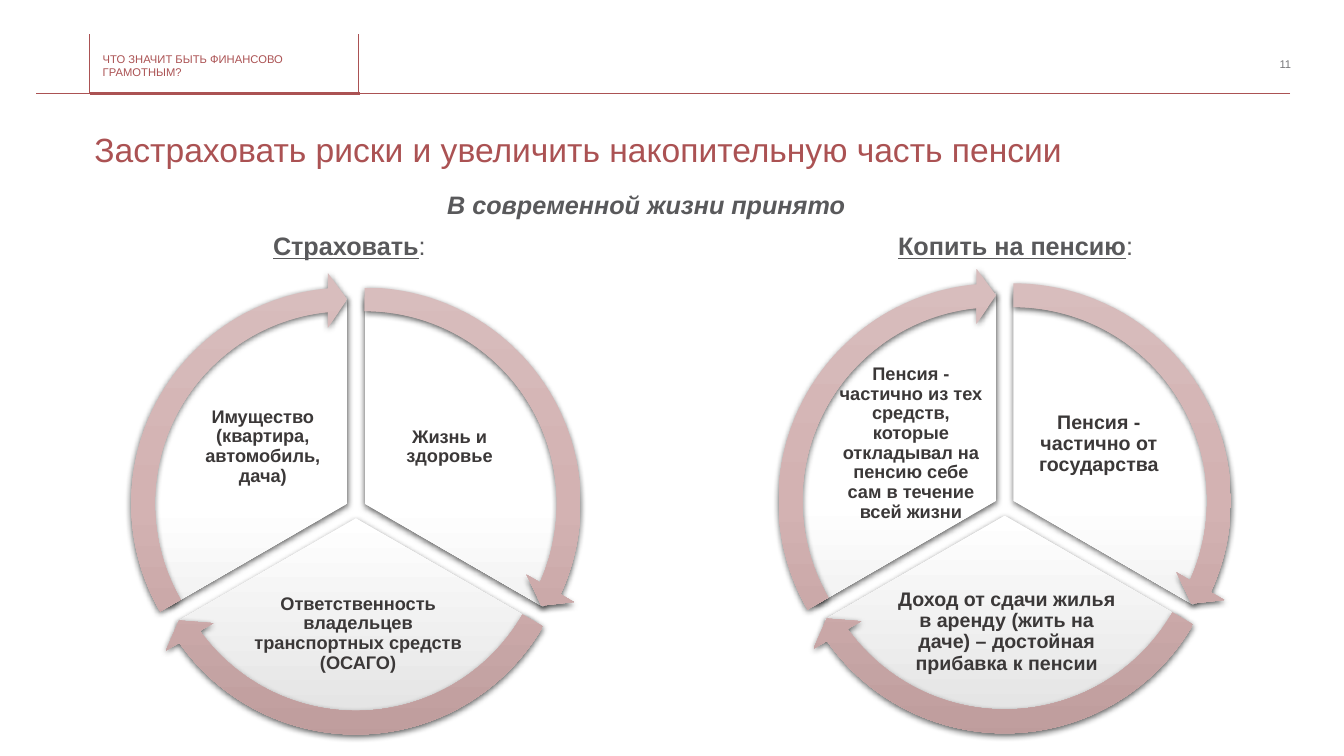
import pptx
import pptx.dml.color
import pptx.enum.shapes
import pptx.enum.text
import pptx.oxml
import pptx.oxml.ns
import pptx.util
from pptx.util import Cm

SHAPE = pptx.enum.shapes.MSO_SHAPE
ALIGN = pptx.enum.text.PP_ALIGN
ANCHOR = pptx.enum.text.MSO_ANCHOR

RED, GREY, DARK = "AB5253", "59595B", "3B3838"
WHITE_FILL = ("FFFFFF", "FFFFFF", "E3E3E3")
PINK_FILL = ("D8BDBD", "D3B2B2", "BE9C9C")

HEADER_LINES = [
    (2.26, 2.34, 0.91, 2.34, 0.25),
    (9.07, 2.36, 2.26, 2.36, 2.25),
    (32.51, 2.34, 9.02, 2.34, 0.25),
    (2.26, 2.36, 2.26, 0.86, 0.25),
    (9.04, 2.36, 9.04, 0.86, 0.25),
]

# Shares of the dial diameter: segment offset, text centre, text size
SEGMENTS = [
    {"shift": (0.021, 0), "pie": (162, 18), "arrow": (14.725, 161.994),
     "centre": (0.227, -0.137), "size": (0.357, 0.298)},
    {"shift": (0, 0.036), "pie": (18, 90), "arrow": (86.72, 18.005),
     "centre": (0.005, 0.316), "size": (0.535, 0.262)},
    {"shift": (-0.021, 0), "pie": (90, 162), "arrow": (158.73, 90),
     "centre": (-0.226, -0.138), "size": (0.357, 0.298)},
]
ARROW_SCALE = 1.123

INSURANCE = [
    ("Жизнь и здоровье", 13),
    ("Ответственность владельцев транспортных средств (ОСАГО)", 13),
    ("Имущество (квартира, автомобиль, дача)", 13),
]
PENSION = [
    ("Пенсия - частично от государства", 14),
    ("Доход от сдачи жилья в аренду (жить на даче) – достойная "
     "прибавка к пенсии", 14),
    ("Пенсия - частично из тех средств, которые откладывал на пенсию себе "
     "сам в течение всей жизни", 13),
]


def rgb(color):
    """Return the colour for a hex string."""
    return pptx.dml.color.RGBColor.from_string(color)


def parse_xml(tag, attrs, inner):
    """Return a drawing element built from its tag, attributes and content."""
    ns = pptx.oxml.ns.nsdecls("a")
    return pptx.oxml.parse_xml(f"<a:{tag} {ns} {attrs}>{inner}</a:{tag}>")


def add_line(s, x1, y1, x2, y2, width):
    """Draw one header line."""
    line = s.shapes.add_connector(pptx.enum.shapes.MSO_CONNECTOR.STRAIGHT,
                                  Cm(x1), Cm(y1), Cm(x2), Cm(y2))
    line.line.color.rgb = rgb(RED)
    line.line.width = pptx.util.Pt(width)
    line._element.spPr.append(parse_xml("effectLst", "", ""))


def add_text(s, box, runs, size, color, align=ALIGN.LEFT, anchor=ANCHOR.TOP,
             inset=None, bold=None, italic=None, spacing=None, wrap=True):
    """Add a one-paragraph text box; runs are (text, underlined bold) pairs."""
    tf = s.shapes.add_textbox(*map(Cm, box)).text_frame
    tf.word_wrap = wrap
    tf.vertical_anchor = anchor
    if inset is not None:
        tf.margin_left = tf.margin_right = Cm(inset)
        tf.margin_top = tf.margin_bottom = Cm(inset)
    p = tf.paragraphs[0]
    p.alignment = align
    p.line_spacing = spacing
    p.font.name = "Arial"
    p.font.size = pptx.util.Pt(size)
    p.font.color.rgb = rgb(color)
    p.font.bold = bold
    p.font.italic = italic
    for text, marked in runs:
        r = p.add_run()
        r.text = text
        if marked:
            r.font.bold = r.font.underline = True


def add_round(s, kind, cx, cy, d, adjustments, colors):
    """Add a shaded round shape with a soft shadow, placed by its centre."""
    sp = s.shapes.add_shape(kind, Cm(cx - d / 2), Cm(cy - d / 2), Cm(d), Cm(d))
    for i, value in enumerate(adjustments):
        sp.adjustments[i] = value
    sp.line.fill.background()
    stops = "".join(f'<a:gs pos="{i * 50000}"><a:srgbClr val="{c}"/></a:gs>'
                    for i, c in enumerate(colors))
    ln = sp._element.spPr.find(pptx.oxml.ns.qn("a:ln"))
    ln.addprevious(parse_xml(
        "gradFill", 'rotWithShape="1"',
        f'<a:gsLst>{stops}</a:gsLst><a:lin ang="5400000" scaled="0"/>'))
    ln.addnext(parse_xml(
        "effectLst", "",
        '<a:outerShdw blurRad="57150" dist="19050" dir="5400000" algn="ctr" '
        'rotWithShape="0"><a:srgbClr val="000000"><a:alpha val="63000"/>'
        '</a:srgbClr></a:outerShdw>'))


def add_dial(s, cx, cy, d, labels):
    """Add three pie segments with labels and the arrows around them."""
    centres = [(cx + seg["shift"][0] * d, cy + seg["shift"][1] * d)
               for seg in SEGMENTS]
    for seg, (x, y), (text, size) in zip(SEGMENTS, centres, labels):
        add_round(s, SHAPE.PIE, x, y, d, seg["pie"], WHITE_FILL)
        w, h = (share * d for share in seg["size"])
        dx, dy = (share * d for share in seg["centre"])
        add_text(s, (cx + dx - w / 2, cy + dy - h / 2, w, h), [(text, False)],
                 size, DARK, ALIGN.CENTER, ANCHOR.MIDDLE, inset=0.05,
                 bold=True, spacing=0.9)
    for seg, (x, y) in zip(SEGMENTS, centres):
        add_round(s, SHAPE.CIRCULAR_ARROW, x, y, d * ARROW_SCALE,
                  (0.051, 3.275, *seg["arrow"], 0.059), PINK_FILL)


def add_heading(s, left, text):
    """Add the underlined heading above a dial."""
    add_text(s, (left, 5.69, 13.59, 1.02), [(text, True), (":", False)],
             18, GREY, ALIGN.CENTER)


def main():
    """Build the slide and save it."""
    prs = pptx.Presentation()
    prs.slide_width, prs.slide_height = Cm(33.87), Cm(19.05)
    s = prs.slides.add_slide(prs.slide_layouts[6])
    for line in HEADER_LINES:
        add_line(s, *line)
    add_text(s, (2.59, 1.3, 6.32, 0.69),
             [("ЧТО ЗНАЧИТ БЫТЬ ФИНАНСОВО ГРАМОТНЫМ?", False)],
             8, RED, anchor=ANCHOR.MIDDLE, inset=0)
    add_text(s, (31.19, 0.97, 1.35, 1.3), [("11", False)], 8, "77777A",
             ALIGN.RIGHT, ANCHOR.MIDDLE, inset=0)
    add_dial(s, 25.32, 12.62, 10.46, PENSION)
    add_heading(s, 2.01, "Страховать")
    add_dial(s, 8.97, 12.69, 10.39, INSURANCE)
    add_heading(s, 18.8, "Копить на пенсию")
    add_text(s, (11.02, 4.65, 10.82, 1.02),
             [("В современной жизни принято", False)], 18, GREY,
             bold=True, italic=True, wrap=False)
    add_text(s, (2.13, 3.25, 30.18, 1.58),
             [("Застраховать риски и увеличить накопительную часть пенсии",
               False)], 24, RED, spacing=0.9)
    prs.save("out.pptx")


if __name__ == "__main__":
    main()
